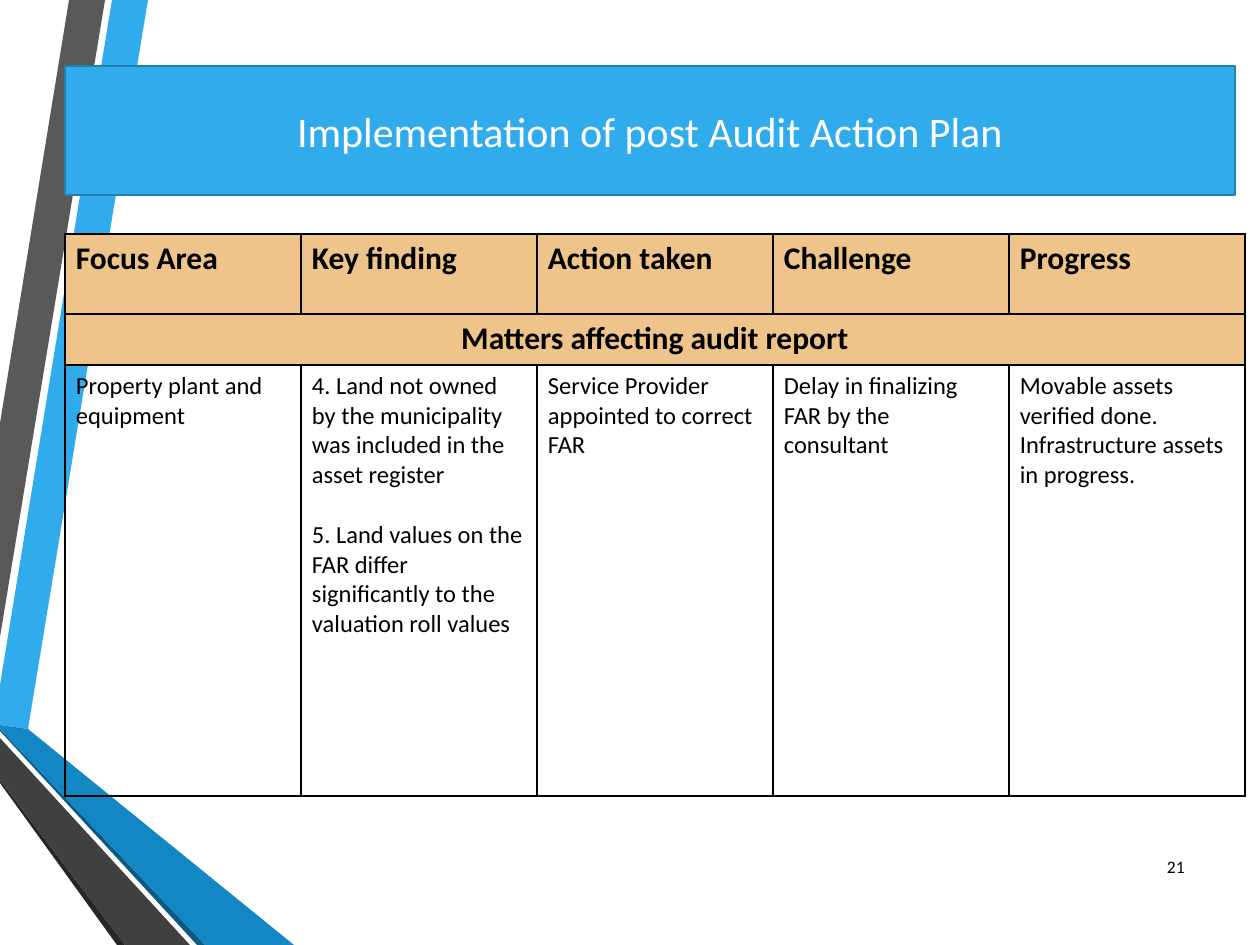
"""Build the audit action plan slide with its ribbon artwork and findings table."""

from dataclasses import dataclass

import lxml.etree
import pptx
import pptx.dml.color
import pptx.enum.shapes
import pptx.enum.text
import pptx.oxml.ns
import pptx.util

RGBColor = pptx.dml.color.RGBColor
Align = pptx.enum.text.PP_ALIGN
Anchor = pptx.enum.text.MSO_ANCHOR

SCALE = 914400 / 126
FONT = "Calibri"
BLACK = RGBColor(0x00, 0x00, 0x00)
WHITE = RGBColor(0xFF, 0xFF, 0xFF)
SKY = RGBColor(0x30, 0xAC, 0xEC)
BLUE = RGBColor(0x12, 0x87, 0xC3)
DEEP_BLUE = RGBColor(0x0C, 0x5A, 0x82)
OUTLINE_BLUE = RGBColor(0x24, 0x7F, 0xAF)
GREY = RGBColor(0x59, 0x59, 0x59)
DARK_GREY = RGBColor(0x40, 0x40, 0x40)
CHARCOAL = RGBColor(0x26, 0x26, 0x26)
SAND = RGBColor(0xEE, 0xC4, 0x8B)


@dataclass(frozen=True)
class Ribbon:
    color: RGBColor
    points: tuple[tuple[int, int], ...]


@dataclass(frozen=True)
class TextStyle:
    size: int
    color: RGBColor = BLACK
    bold: bool = False
    align: Align = Align.LEFT


RIBBONS = (
    Ribbon(SKY, ((0, 685), (0, 725), (28, 729), (148, 0), (112, 0))),
    Ribbon(GREY, ((105, 0), (69, 0), (0, 423), (0, 637))),
    Ribbon(CHARCOAL, ((0, 780), (0, 783), (117, 945), (125, 945))),
    Ribbon(DEEP_BLUE, ((0, 729), (0, 731), (197, 945), (205, 945))),
    Ribbon(BLUE, ((0, 729), (205, 945), (294, 945), (28, 729), (0, 725))),
    Ribbon(DARK_GREY, ((0, 780), (125, 945), (190, 945), (0, 738))),
)
TITLE_STYLE = TextStyle(24, WHITE, align=Align.CENTER)
HEADER_STYLE = TextStyle(18, bold=True)
SECTION_STYLE = TextStyle(18, bold=True, align=Align.CENTER)
BODY_STYLE = TextStyle(14)
NUMBER_STYLE = TextStyle(10, align=Align.RIGHT)

HEADERS = ("Focus Area", "Key finding", "Action taken", "Challenge", "Progress")
SECTION = ("Matters affecting audit report", "", "", "", "")
FINDINGS = (
    "Property plant and equipment",
    "4. Land not owned by the municipality was included in the asset register\n"
    "5. Land values on the FAR differ significantly to the valuation roll values",
    "Service Provider appointed to correct FAR",
    "Delay in finalizing FAR by the consultant",
    "Movable assets verified done. Infrastructure assets in progress.",
)
TABLE_ROWS = (
    (HEADERS, HEADER_STYLE, SAND, 80),
    (SECTION, SECTION_STYLE, SAND, 51),
    (FINDINGS, BODY_STYLE, None, 431),
)
COLUMN_WIDTH = 236
PARAGRAPH_GAP = 17


def px(length: int) -> pptx.util.Emu:
    return pptx.util.Emu(round(length * SCALE))


def write_text(text_frame, text: str, style: TextStyle) -> None:
    text_frame.text = text
    text_frame.word_wrap = True
    for index, paragraph in enumerate(text_frame.paragraphs):
        paragraph.alignment = style.align
        paragraph.space_before = pptx.util.Pt(PARAGRAPH_GAP if index else 0)
        paragraph.font.name = FONT
        paragraph.font.size = pptx.util.Pt(style.size)
        paragraph.font.bold = style.bold
        paragraph.font.color.rgb = style.color


def draw_ribbon(slide, ribbon: Ribbon) -> None:
    start, *others = ribbon.points
    builder = slide.shapes.build_freeform(*start, scale=SCALE)
    builder.add_line_segments(others, close=True)
    shape = builder.convert_to_shape()
    shape.shadow.inherit = False
    shape.fill.solid()
    shape.fill.fore_color.rgb = ribbon.color
    shape.line.fill.background()


def draw_title(slide) -> None:
    shape = slide.shapes.add_shape(
        pptx.enum.shapes.MSO_SHAPE.RECTANGLE, px(65), px(66), px(1170), px(129)
    )
    shape.shadow.inherit = False
    shape.fill.solid()
    shape.fill.fore_color.rgb = SKY
    shape.line.color.rgb = OUTLINE_BLUE
    shape.line.width = pptx.util.Pt(1.25)
    shape.text_frame.vertical_anchor = Anchor.MIDDLE
    write_text(shape.text_frame, "Implementation of post Audit Action Plan", TITLE_STYLE)


def add_borders(cell) -> None:
    qn = pptx.oxml.ns.qn
    properties = cell._tc.get_or_add_tcPr()
    for side in ("lnL", "lnR", "lnT", "lnB"):
        line = lxml.etree.SubElement(properties, qn(f"a:{side}"), w="12700")
        fill = lxml.etree.SubElement(line, qn("a:solidFill"))
        lxml.etree.SubElement(fill, qn("a:srgbClr"), val=str(BLACK))


def style_cell(cell, fill: RGBColor | None) -> None:
    cell.margin_left = cell.margin_right = px(11)
    cell.margin_top = cell.margin_bottom = px(6)
    add_borders(cell)
    if fill is None:
        cell.fill.background()
    else:
        cell.fill.solid()
        cell.fill.fore_color.rgb = fill


def draw_table(slide) -> None:
    height = sum(row[3] for row in TABLE_ROWS)
    table = slide.shapes.add_table(
        len(TABLE_ROWS), len(HEADERS), px(65), px(234),
        px(COLUMN_WIDTH * len(HEADERS)), px(height),
    ).table
    table.first_row = False
    table.horz_banding = False
    for column in table.columns:
        column.width = px(COLUMN_WIDTH)
    for row, (texts, style, fill, row_height) in zip(table.rows, TABLE_ROWS):
        row.height = px(row_height)
        for cell, text in zip(row.cells, texts):
            style_cell(cell, fill)
            write_text(cell.text_frame, text, style)
    table.cell(1, 0).merge(table.cell(1, len(HEADERS) - 1))


def draw_slide_number(slide) -> None:
    box = slide.shapes.add_textbox(px(1138), px(842), px(59), px(50))
    box.text_frame.vertical_anchor = Anchor.MIDDLE
    write_text(box.text_frame, "21", NUMBER_STYLE)


def main() -> None:
    presentation = pptx.Presentation()
    presentation.slide_width = px(1260)
    presentation.slide_height = px(945)
    slide = presentation.slides.add_slide(presentation.slide_layouts[6])
    for ribbon in RIBBONS:
        draw_ribbon(slide, ribbon)
    draw_title(slide)
    draw_table(slide)
    draw_slide_number(slide)
    presentation.save("out.pptx")


if __name__ == "__main__":
    main()
